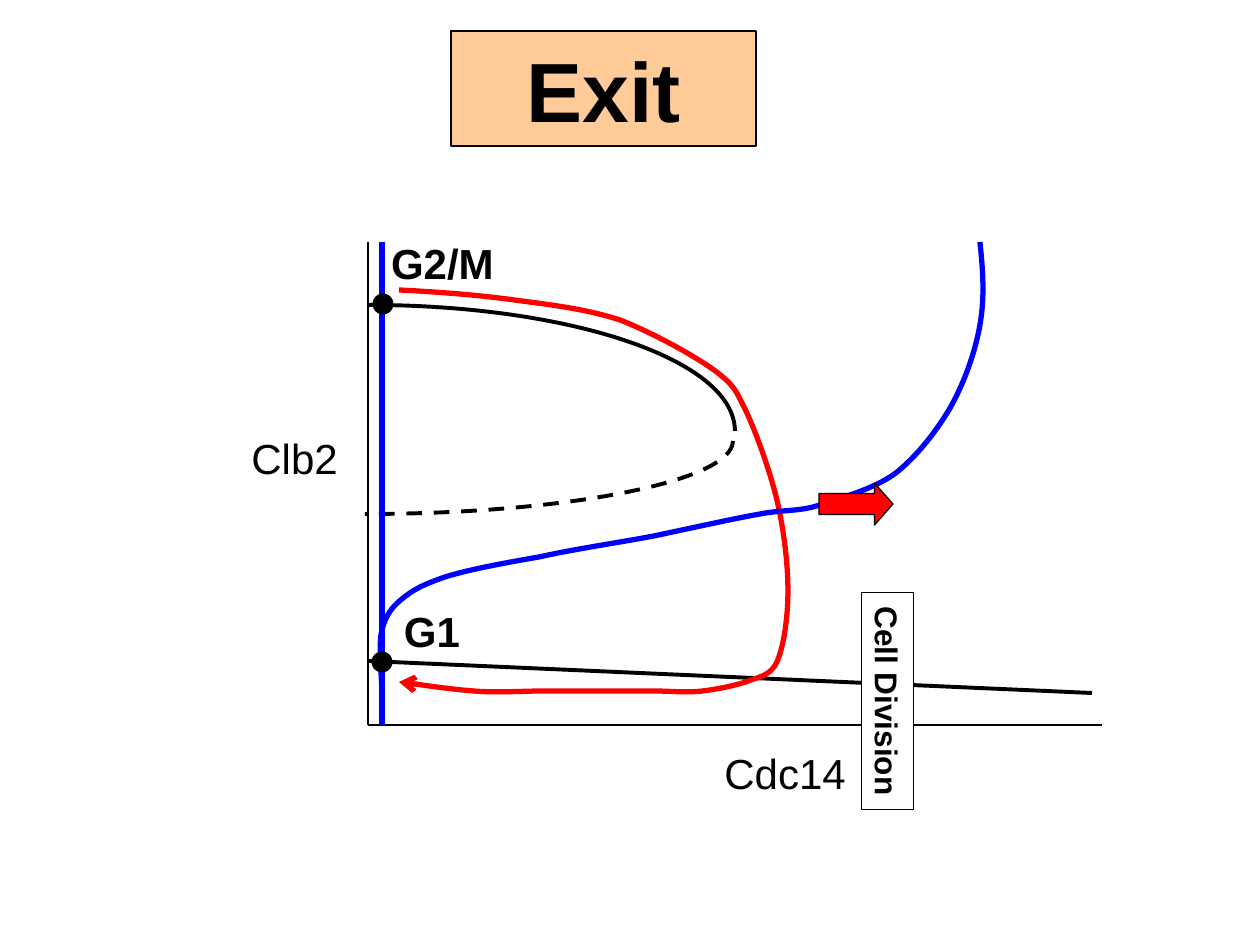
from lxml.etree import SubElement
from pptx import Presentation
from pptx.dml.color import RGBColor
from pptx.enum.dml import MSO_LINE
from pptx.enum.shapes import MSO_CONNECTOR, MSO_SHAPE
from pptx.enum.text import MSO_ANCHOR, MSO_AUTO_SIZE, PP_ALIGN
from pptx.oxml.ns import qn
from pptx.util import Emu, Pt

EMU_PER_PX = 914400 / 126
COLORS = {"black": "000000", "white": "FFFFFF", "peach": "FFCC99",
          "red": "FF0000", "blue": "0000FF"}

# Content: lengths in px, boxes as left, top, width, height
TITLE = ("Exit", (451, 31, 305, 115))
LABELS = [  # text, box, bold, alignment
    ("Clb2", (239, 426, 112, 63), False, PP_ALIGN.LEFT),
    ("Cdc14", (712, 741, 147, 63), False, PP_ALIGN.LEFT),
    ("G1", (391, 599, 82, 63), True, PP_ALIGN.CENTER),
    ("G2/M", (378, 231, 129, 63), True, PP_ALIGN.CENTER),
]
DIVISION = ("Cell Division", (779, 675, 217, 52))
DIVISION_ARROW = (819, 483, 74, 42)
STATES = [(382, 662), (383, 304)]  # centres of the G1 and G2/M dots
DOT = 21

# Two points make a straight line; more are a start and Bézier triples
AXES = [[(368, 242), (368, 725)], [(368, 725), (1102, 725)]]
UPPER_BRANCH = [(735, 431), (735, 360), (571, 305), (368, 305)]
UNSTABLE_BRANCH = [(733, 441), (733, 481), (568, 514), (365, 514)]
LOWER_BRANCH = [(368, 661), (1092, 693)]
EXIT_PATH = [
    (399, 290), (438, 292), (478, 295), (514, 300),
    (552, 305), (586, 309), (620, 320), (653, 333), (693, 355), (714, 370),
    (735, 386), (735, 389), (746, 411), (756, 432), (770, 471), (777, 500),
    (784, 530), (788, 564), (788, 591), (788, 617), (784, 646), (777, 662),
    (770, 677), (757, 677), (746, 682), (733, 686), (719, 689), (703, 691),
    (688, 693), (669, 691), (651, 691), (634, 691), (616, 691), (599, 691),
    (582, 691), (567, 691), (546, 691), (525, 691), (496, 693), (473, 691),
    (449, 689), (423, 685), (399, 682),
]
CDC14_CURVE = [
    (382, 725), (382, 717), (382, 708), (382, 693),
    (382, 678), (378, 645), (382, 630), (386, 615), (392, 607), (402, 599),
    (413, 590), (422, 585), (445, 577), (467, 570), (504, 563), (539, 557),
    (575, 549), (617, 543), (654, 536), (692, 528), (732, 519), (760, 514),
    (788, 509), (800, 512), (823, 504), (846, 496), (874, 489), (896, 473),
    (917, 456), (935, 433), (949, 410), (963, 386), (975, 354), (980, 325),
    (985, 297), (983, 270), (980, 242),
]
CDC14_BASE = [(382, 242), (382, 725)]
TRACES = [  # points, colour, width in points, dashed, arrowhead
    *((axis, "black", 0.75, False, False) for axis in AXES),
    (UPPER_BRANCH, "black", 2.25, False, False),
    (UNSTABLE_BRANCH, "black", 2.25, True, False),
    (LOWER_BRANCH, "black", 2.25, False, False),
    (EXIT_PATH, "red", 3, False, True),
    (CDC14_CURVE, "blue", 3, False, False),
    (CDC14_BASE, "blue", 3, False, False),
]


def px(*lengths):
    return [Emu(round(length * EMU_PER_PX)) for length in lengths]


def color(name):
    return RGBColor.from_string(COLORS[name])


def outline(line, name, width):
    line.color.rgb = color(name)
    line.width = Pt(width)


def fill_box(shape, fill):
    shape.fill.solid()
    shape.fill.fore_color.rgb = color(fill)
    outline(shape.line, "black", 0.75)


def write(shape, text, size, bold, alignment, **frame_format):
    frame = shape.text_frame
    frame.text = text
    for name, value in frame_format.items():
        setattr(frame, name, value)
    paragraph = frame.paragraphs[0]
    paragraph.alignment = alignment
    font = paragraph.runs[0].font
    for name, value in {"name": "Arial", "size": Pt(size), "bold": bold}.items():
        setattr(font, name, value)
    font.color.rgb = color("black")


def add_line(shapes, points):
    start, end = points
    connector = shapes.add_connector(MSO_CONNECTOR.STRAIGHT, *px(*start, *end))
    SubElement(connector._element.spPr, qn("a:effectLst"))
    return connector


def add_curve(shapes, points):
    builder = shapes.build_freeform(*points[0], scale=EMU_PER_PX)
    builder.add_line_segments(points[1:], close=False)
    curve = builder.convert_to_shape()
    curve.fill.background()
    curve.shadow.inherit = False
    # Join every three straight segments into one Bézier segment
    outline_path = next(curve._element.iter(qn("a:path")))
    segments = outline_path.findall(qn("a:lnTo"))
    for first in range(0, len(segments), 3):
        bezier = SubElement(outline_path, qn("a:cubicBezTo"))
        for segment in segments[first:first + 3]:
            bezier.append(segment[0])
            outline_path.remove(segment)
    return curve


def add_box(shapes, preset, box, fill):
    shape = shapes.add_shape(preset, *px(*box))
    shape.shadow.inherit = False
    fill_box(shape, fill)
    return shape


def main():
    presentation = Presentation()
    presentation.slide_width, presentation.slide_height = px(1260, 945)
    slide = presentation.slides.add_slide(presentation.slide_layouts[5])
    shapes = slide.shapes

    # Title
    text, box = TITLE
    title = shapes.title
    title.left, title.top, title.width, title.height = px(*box)
    fill_box(title, "peach")
    write(title, text, 48, True, PP_ALIGN.CENTER, word_wrap=True,
          auto_size=MSO_AUTO_SIZE.NONE, vertical_anchor=MSO_ANCHOR.MIDDLE)

    # Axes, branches and trajectories
    for points, name, width, dashed, arrowhead in TRACES:
        add_trace = add_line if len(points) == 2 else add_curve
        line = add_trace(shapes, points).line
        outline(line, name, width)
        if dashed:
            line.dash_style = MSO_LINE.DASH
        if arrowhead:
            SubElement(line._get_or_add_ln(), qn("a:tailEnd"), type="arrow")

    # Cell division
    arrow = add_box(shapes, MSO_SHAPE.RIGHT_ARROW, DIVISION_ARROW, "red")
    arrow.adjustments[1] = 0.44
    text, box = DIVISION
    division = add_box(shapes, MSO_SHAPE.RECTANGLE, box, "white")
    division.rotation = 90
    write(division, text, 18, True, PP_ALIGN.CENTER, word_wrap=False,
          vertical_anchor=MSO_ANCHOR.MIDDLE)

    # Steady states
    for x, y in STATES:
        dot_box = (x - DOT / 2, y - DOT / 2, DOT, DOT)
        dot = add_box(shapes, MSO_SHAPE.OVAL, dot_box, "black")
        dot.line.fill.background()

    # Labels
    for text, box, bold, alignment in LABELS:
        label = shapes.add_textbox(*px(*box))
        write(label, text, 24, bold, alignment, word_wrap=False,
              auto_size=MSO_AUTO_SIZE.SHAPE_TO_FIT_TEXT)

    presentation.save("out.pptx")


if __name__ == "__main__":
    main()
